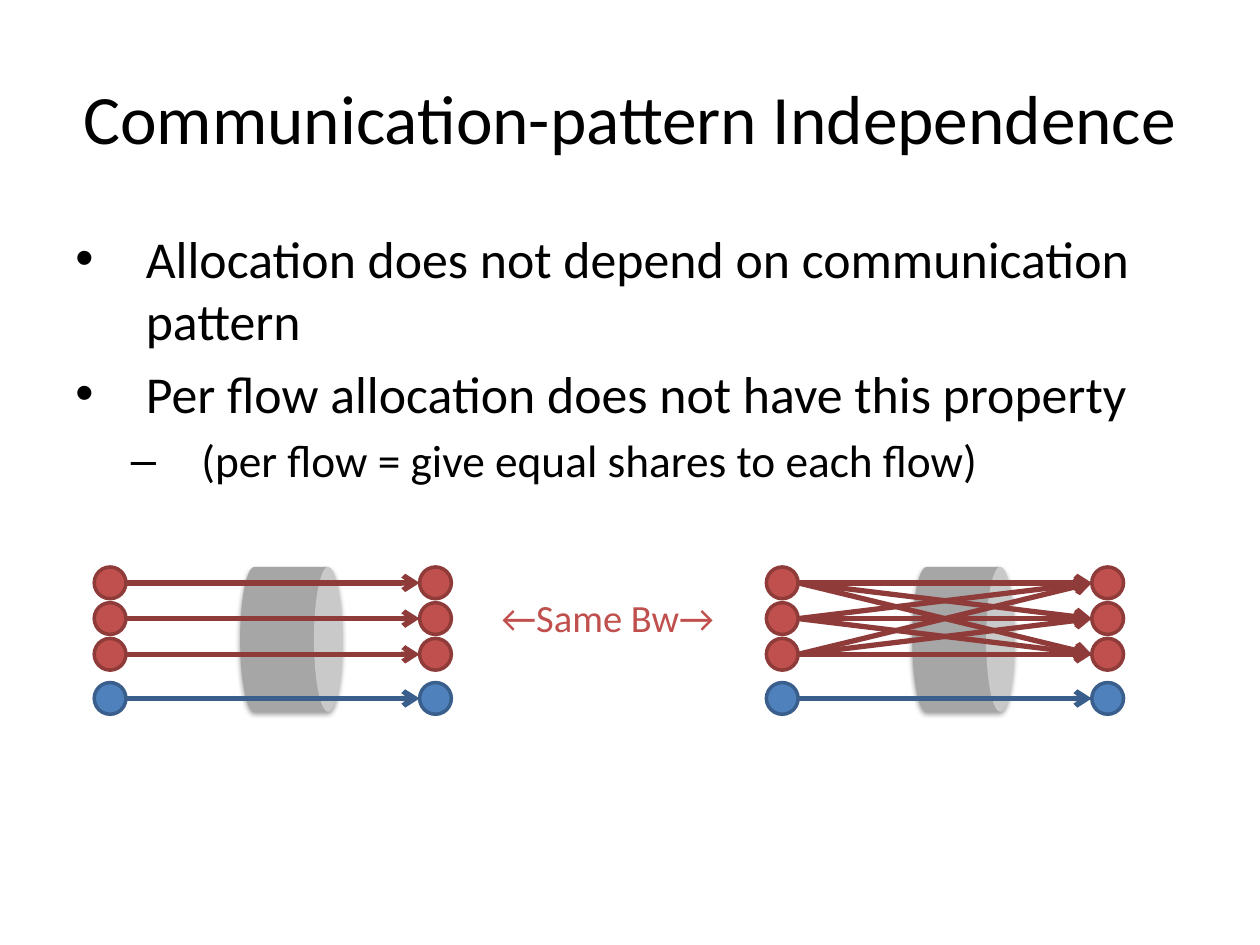
from itertools import product
from lxml.etree import SubElement
from pptx import Presentation
from pptx.dml.color import RGBColor
from pptx.enum.shapes import MSO_CONNECTOR, MSO_SHAPE
from pptx.enum.text import MSO_ANCHOR, MSO_AUTO_SIZE, PP_ALIGN
from pptx.oxml.ns import qn
from pptx.util import Cm, Pt

TITLE = "Communication-pattern Independence"
BULLETS = [
    ("Allocation does not depend on communication pattern", 0),
    ("Per flow allocation does not have this property", 0),
    ("(per flow = give equal shares to each flow)", 1),
]
LEVELS = [("•", 1.42, 29.6), ("–", 2.54, 25.9)]
LABEL = "←Same Bw→"
COLORS = {
    "text": "000000", "link": "A6A6A6",
    "red": "C0504D", "red_line": "8E3B39",
    "blue": "4F81BD", "blue_line": "3A5F8C",
}
FONT = "Calibri"
HANG = 1.42
NODE, SPAN = 0.64, 6.56
RED_ROWS = [11.75 + 0.72 * i for i in range(3)]
BLUE_ROW = 14.08
STRAIGHT = [(y, y) for y in RED_ROWS]
PATTERNS = [(1.9, STRAIGHT), (15.45, list(product(RED_ROWS, repeat=2)))]


def color(name):
    return RGBColor.from_string(COLORS[name])


def format_runs(p, size, name="text"):
    for r in p.runs:
        r.font.name = FONT
        r.font.size = Pt(size)
        r.font.color.rgb = color(name)


def add_link(s, x):
    sp = s.shapes.add_shape(MSO_SHAPE.CAN, Cm(x + 2.51), Cm(11.86), Cm(2.92), Cm(2.06))
    sp.rotation = 90
    sp.adjustments[0] = 0.278
    sp.fill.solid()
    sp.fill.fore_color.rgb = color("link")
    sp.line.fill.background()
    sp.shadow.inherit = False
    effects = sp._element.spPr.find(qn("a:effectLst"))
    shadow = SubElement(effects, qn("a:outerShdw"), blurRad=str(Pt(3.1)),
                        dist=str(Pt(1.6)), dir="5400000", rotWithShape="0")
    black = SubElement(shadow, qn("a:srgbClr"), val=COLORS["text"])
    SubElement(black, qn("a:alpha"), val="38000")


def add_node(s, x, y, name):
    sp = s.shapes.add_shape(MSO_SHAPE.OVAL, Cm(x), Cm(y - NODE / 2), Cm(NODE), Cm(NODE))
    sp.fill.solid()
    sp.fill.fore_color.rgb = color(name)
    sp.line.color.rgb = color(name + "_line")
    sp.line.width = Pt(2)
    sp.shadow.inherit = False


def add_flow(s, x, y1, y2, name):
    c = s.shapes.add_connector(MSO_CONNECTOR.STRAIGHT, Cm(x + NODE), Cm(y1), Cm(x + SPAN), Cm(y2))
    c.line.color.rgb = color(name + "_line")
    c.line.width = Pt(3)
    SubElement(c.line._get_or_add_ln(), qn("a:tailEnd"), type="arrow")
    SubElement(c._element.spPr, qn("a:effectLst"))


def add_title(s):
    sp = s.shapes.title
    sp.left, sp.top, sp.width, sp.height = Cm(1.27), Cm(0.76), Cm(22.86), Cm(3.18)
    tf = sp.text_frame
    tf.text = TITLE
    tf.vertical_anchor = MSO_ANCHOR.MIDDLE
    tf.auto_size = MSO_AUTO_SIZE.NONE
    tf.paragraphs[0].alignment = PP_ALIGN.CENTER
    format_runs(tf.paragraphs[0], 39.6)


def add_bullets(s):
    tf = s.shapes.add_textbox(Cm(1.27), Cm(4.45), Cm(22.86), Cm(5.92)).text_frame
    tf.word_wrap = True
    for i, (text, level) in enumerate(BULLETS):
        mark, indent, size = LEVELS[level]
        p = tf.add_paragraph() if i else tf.paragraphs[0]
        p.text = text
        p.level = level
        p.space_before = Pt(round(size * 0.2))
        format_runs(p, size)
        pPr = p._p.get_or_add_pPr()
        pPr.set("marL", str(Cm(indent)))
        pPr.set("indent", str(Cm(-HANG)))
        SubElement(pPr, qn("a:buFont"), typeface="Arial")
        SubElement(pPr, qn("a:buChar"), char=mark)


def add_label(s):
    tf = s.shapes.add_textbox(Cm(9.86), Cm(11.86), Cm(4.98), Cm(1.19)).text_frame
    tf.word_wrap = False
    tf.auto_size = MSO_AUTO_SIZE.SHAPE_TO_FIT_TEXT
    tf.text = LABEL
    format_runs(tf.paragraphs[0], 22, "red")


def main():
    prs = Presentation()
    prs.slide_width, prs.slide_height = Cm(25.4), Cm(19.05)
    s = prs.slides.add_slide(prs.slide_layouts[5])
    add_title(s)
    add_bullets(s)
    add_label(s)
    for x, flows in PATTERNS:
        add_link(s, x)
        for name, rows, pairs in (("blue", [BLUE_ROW], [(BLUE_ROW, BLUE_ROW)]),
                                  ("red", RED_ROWS, flows)):
            for y, left in product(rows, (x, x + SPAN)):
                add_node(s, left, y, name)
            for y1, y2 in pairs:
                add_flow(s, x, y1, y2, name)
    prs.save("out.pptx")


if __name__ == "__main__":
    main()
